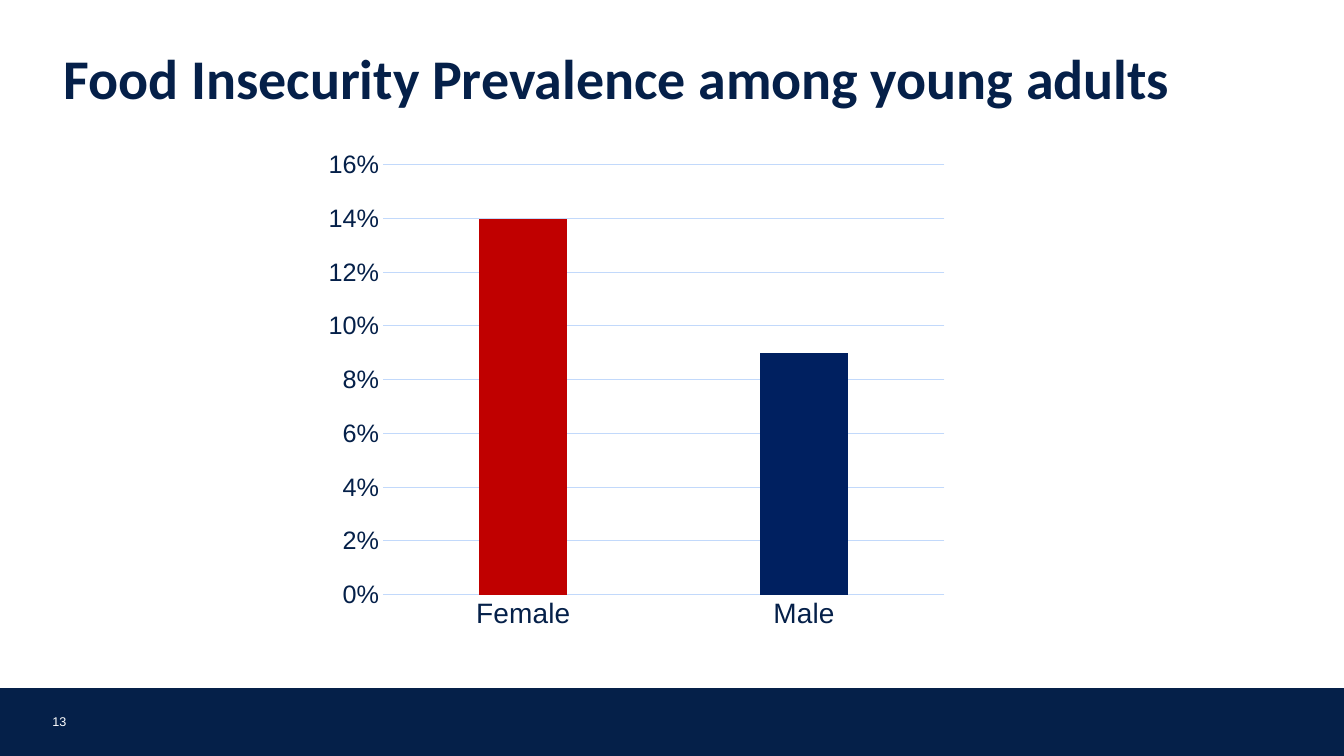
from dataclasses import dataclass

from lxml import etree
from pptx import Presentation
from pptx.chart.data import CategoryChartData
from pptx.dml.color import RGBColor
from pptx.enum.chart import XL_CHART_TYPE, XL_TICK_MARK
from pptx.enum.text import MSO_ANCHOR, PP_ALIGN
from pptx.oxml.ns import qn
from pptx.util import Inches, Pt

COLUMN = XL_CHART_TYPE.COLUMN_CLUSTERED
NO_TICK = XL_TICK_MARK.NONE
LEFT = PP_ALIGN.LEFT
TOP = MSO_ANCHOR.TOP
BOTTOM = MSO_ANCHOR.BOTTOM


@dataclass(frozen=True)
class Theme:
    navy: str = "052049"
    white: str = "FFFFFF"
    grid: str = "C2D9FB"
    red: str = "C00000"
    blue: str = "002060"
    head: str = "Calibri"
    body: str = "Arial"
    title: int = 40
    label: int = 20
    scale: int = 18
    page: int = 9


@dataclass(frozen=True)
class Box:
    left: float
    top: float
    width: float
    height: float

    def place(self) -> tuple:
        return tuple(Inches(n) for n in (self.left, self.top, self.width, self.height))


@dataclass(frozen=True)
class Bar:
    name: str
    value: float
    color: str


THEME = Theme()
BARS = [Bar("Female", 0.14, THEME.red), Bar("Male", 0.09, THEME.blue)]
PLOT = {"x": 0.126, "y": 0.043, "w": 0.836, "h": 0.814}


def rgb(color: str) -> RGBColor:
    return RGBColor.from_string(color)


def style(font, face: str, size: int, color: str, bold: bool = False) -> None:
    font.name = face
    font.size = Pt(size)
    font.bold = bold
    font.color.rgb = rgb(color)


def rule(line) -> None:
    line.color.rgb = rgb(THEME.grid)
    line.width = Pt(0.75)


def add_title(slide, box: Box, text: str) -> None:
    title = slide.shapes.title
    title.left, title.top, title.width, title.height = box.place()
    frame = title.text_frame
    frame.word_wrap = True
    frame.vertical_anchor = TOP
    para = frame.paragraphs[0]
    para.alignment = LEFT
    para.line_spacing = 0.85
    para.space_before = Pt(0)
    run = para.add_run()
    run.text = text
    style(run.font, THEME.head, THEME.title, THEME.navy, True)


def add_band(slide, box: Box) -> None:
    band = slide.shapes.add_shape(1, *box.place())
    band.shadow.inherit = False
    band.fill.solid()
    band.fill.fore_color.rgb = rgb(THEME.navy)
    band.line.color.rgb = rgb(THEME.navy)
    band.line.width = Pt(1.5)


def add_page(slide, box: Box, text: str) -> None:
    frame = slide.shapes.add_textbox(*box.place()).text_frame
    frame.word_wrap = True
    frame.vertical_anchor = BOTTOM
    frame.margin_left = frame.margin_right = 0
    frame.margin_top = frame.margin_bottom = 0
    run = frame.paragraphs[0].add_run()
    run.text = text
    style(run.font, THEME.body, THEME.page, THEME.white)


def fix_plot(chart) -> None:
    area = chart.plots[0]._element.getparent()
    for old in area.findall(qn("c:layout")):
        area.remove(old)
    layout = etree.Element(qn("c:layout"))
    manual = etree.SubElement(layout, qn("c:manualLayout"))
    parts = {"layoutTarget": "inner", "xMode": "edge", "yMode": "edge", **PLOT}
    for tag, value in parts.items():
        etree.SubElement(manual, qn(f"c:{tag}")).set("val", str(value))
    area.insert(0, layout)


def add_bars(slide, box: Box, bars: list[Bar]) -> None:
    data = CategoryChartData(number_format="0%")
    data.categories = [bar.name for bar in bars]
    data.add_series("Series 1", [bar.value for bar in bars])
    chart = slide.shapes.add_chart(COLUMN, *box.place(), data).chart
    chart.has_title = False
    chart.has_legend = False
    style(chart.font, THEME.body, THEME.label, THEME.navy)

    plot = chart.plots[0]
    plot.vary_by_categories = False
    plot.gap_width = 219
    plot.overlap = -27
    series = plot.series[0]
    series.format.fill.solid()
    series.format.fill.fore_color.rgb = rgb(THEME.navy)
    for i, bar in enumerate(bars):
        fill = series.points[i].format.fill
        fill.solid()
        fill.fore_color.rgb = rgb(bar.color)

    names, scale = chart.category_axis, chart.value_axis
    for axis, size in ((names, THEME.label), (scale, THEME.scale)):
        axis.major_tick_mark = axis.minor_tick_mark = NO_TICK
        style(axis.tick_labels.font, THEME.body, size, THEME.navy)
    rule(names.format.line)
    scale.format.line.fill.background()
    scale.has_major_gridlines = True
    rule(scale.major_gridlines.format.line)
    scale.minimum_scale = 0
    scale.maximum_scale = 0.16
    scale.major_unit = 0.02
    scale.tick_labels.number_format = "0%"
    scale.tick_labels.number_format_is_linked = False
    fix_plot(chart)


def main() -> None:
    deck = Presentation()
    deck.slide_width = Inches(13.33)
    deck.slide_height = Inches(7.5)
    slide = deck.slides.add_slide(deck.slide_layouts[5])
    add_band(slide, Box(0, 6.84, 13.33, 0.66))
    add_page(slide, Box(0.52, 7.06, 0.36, 0.17), "13")
    add_title(slide, Box(0.53, 0.48, 12.27, 0.68), "Food Insecurity Prevalence among young adults")
    add_bars(slide, Box(2.96, 1.41, 6.66, 5.24), BARS)
    deck.save("out.pptx")


if __name__ == "__main__":
    main()
